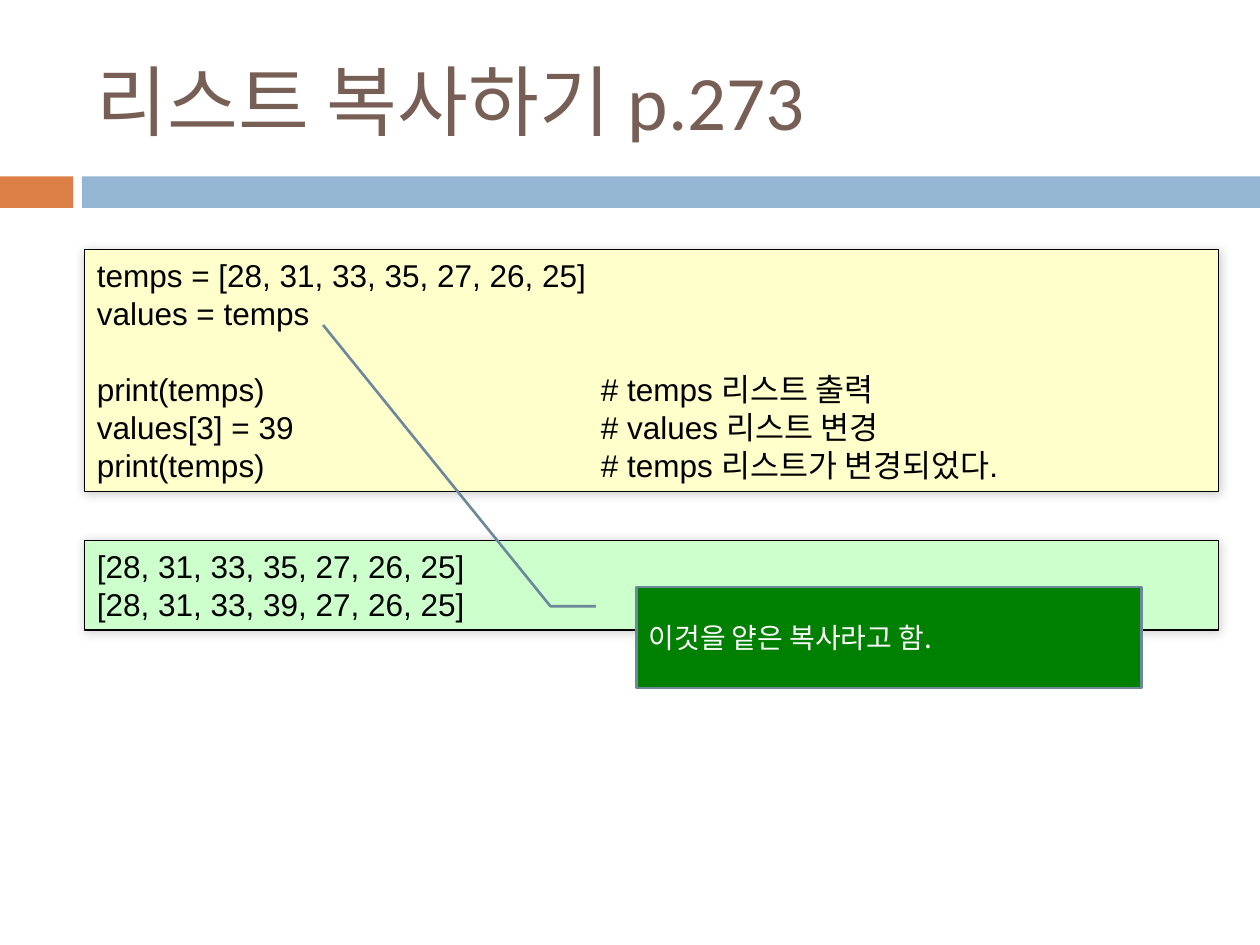
import pptx
import pptx.util
import pptx.dml.color
import pptx.enum.shapes
import pptx.enum.text
import pptx.oxml
import pptx.oxml.ns

Inches, Pt = pptx.util.Inches, pptx.util.Pt
RGBColor = pptx.dml.color.RGBColor
SHAPE = pptx.enum.shapes.MSO_SHAPE
ANCHOR = pptx.enum.text.MSO_ANCHOR
ALIGN = pptx.enum.text.PP_ALIGN

BLACK = RGBColor(0x00, 0x00, 0x00)
WHITE = RGBColor(0xFF, 0xFF, 0xFF)
BROWN = RGBColor(0x77, 0x5F, 0x55)
ORANGE = RGBColor(0xDD, 0x80, 0x47)
BLUE = RGBColor(0x94, 0xB6, 0xD2)
CREAM = RGBColor(0xFF, 0xFF, 0xCC)
MINT = RGBColor(0xCC, 0xFF, 0xCC)
GREEN = RGBColor(0x00, 0x80, 0x00)
SLATE = RGBColor(0x6D, 0x87, 0x9B)

HANGUL = "Noto Sans CJK KR"
LEFT = 0.67
LEAD = Pt(21.7)
TABS = (2, 3, 4)

CODE = [
    "temps = [28, 31, 33, 35, 27, 26, 25]",
    "values = temps",
    "print(temps)\t\t\t# temps 리스트 출력",
    "values[3] = 39\t\t\t# values 리스트 변경",
    "print(temps)\t\t\t# temps 리스트가 변경되었다.",
]
RESULT = ["[28, 31, 33, 35, 27, 26, 25]", "[28, 31, 33, 39, 27, 26, 25]"]


def add_xml(parent, body):
    """Append one DrawingML element, given without its namespace."""
    tag, rest = body.split(" ", 1)
    space = pptx.oxml.ns.nsdecls("a")
    parent.append(pptx.oxml.parse_xml(f"<a:{tag} {space} {rest}"))


def set_all(item, values):
    for name, value in values.items():
        setattr(item, name, value)


def write(frame, lines, anchor, size, font, color):
    set_all(frame, {"word_wrap": True, "vertical_anchor": anchor})
    for i, line in enumerate(lines):
        para = frame.paragraphs[0] if i == 0 else frame.add_paragraph()
        para.alignment = ALIGN.LEFT
        run = para.add_run()
        run.text = line
        run.font.color.rgb = color
        set_all(run.font, {"size": Pt(size), "name": font})
        add_xml(run.font._element, f'ea typeface="{HANGUL}"/>')


def add_box(slide, kind, box, fill, line=None, width=0):
    shape = slide.shapes.add_shape(kind, *map(Inches, box))
    shape.shadow.inherit = False
    shape.fill.solid()
    shape.fill.fore_color.rgb = fill
    if line is None:
        shape.line.fill.background()
    else:
        shape.line.color.rgb = line
        shape.line.width = Pt(width)
    return shape


def add_band(slide, top, height):
    add_box(slide, SHAPE.RECTANGLE, (0, top, 0.58, height), ORANGE)
    add_box(slide, SHAPE.RECTANGLE, (0.65, top, 9.35, height), BLUE)


def add_title(slide, box, text):
    frame = slide.shapes.add_textbox(*map(Inches, box)).text_frame
    write(frame, [text], ANCHOR.MIDDLE, 44, "Calibri", BROWN)


def add_panel(slide, box, fill, lines, gap=None):
    """Add a shadowed box of code lines, with a free line before line gap."""
    shape = add_box(slide, SHAPE.RECTANGLE, box, fill, BLACK, 0.75)
    glow = shape._element.spPr.find(pptx.oxml.ns.qn("a:effectLst"))
    add_xml(glow, 'outerShdw blurRad="76200" dist="0" dir="18900000">'
                  '<a:srgbClr val="000000"><a:alpha val="20000"/></a:srgbClr>'
                  '</a:outerShdw>')
    write(shape.text_frame, lines, ANCHOR.TOP, 18, "Arial", BLACK)
    stops = "".join(f'<a:tab pos="{Inches(t)}" algn="l"/>' for t in TABS)
    for i, para in enumerate(shape.text_frame.paragraphs):
        para.line_spacing = LEAD
        if i == gap:
            para.space_before = LEAD
        if "\t" in lines[i]:
            add_xml(para._p.get_or_add_pPr(), f"tabLst >{stops}</a:tabLst>")


def add_note(slide, box, text):
    shape = add_box(slide, SHAPE.LINE_CALLOUT_2, box, GREEN, SLATE, 1.5)
    # Leader points as y, x shares of the box
    for i, share in enumerate((0.19, -0.08, 0.19, -0.17, -2.6, -0.62)):
        shape.adjustments[i] = share
    write(shape.text_frame, [text], ANCHOR.MIDDLE, 16, HANGUL, WHITE)


def main():
    deck = pptx.Presentation()
    set_all(deck, {"slide_width": Inches(10), "slide_height": Inches(7.5)})
    slide = deck.slides.add_slide(deck.slide_layouts[6])
    add_band(slide, 1.4, 0.25)
    add_title(slide, (LEFT, 0.25, 8.92, 1.08), "리스트 복사하기 p.273")
    add_panel(slide, (LEFT, 1.98, 9, 1.92), CREAM, CODE, gap=2)
    add_panel(slide, (LEFT, 4.29, 9, 0.71), MINT, RESULT)
    add_note(slide, (5.05, 4.66, 4.01, 0.8), "이것을 얕은 복사라고 함.")
    deck.save("out.pptx")


if __name__ == "__main__":
    main()
